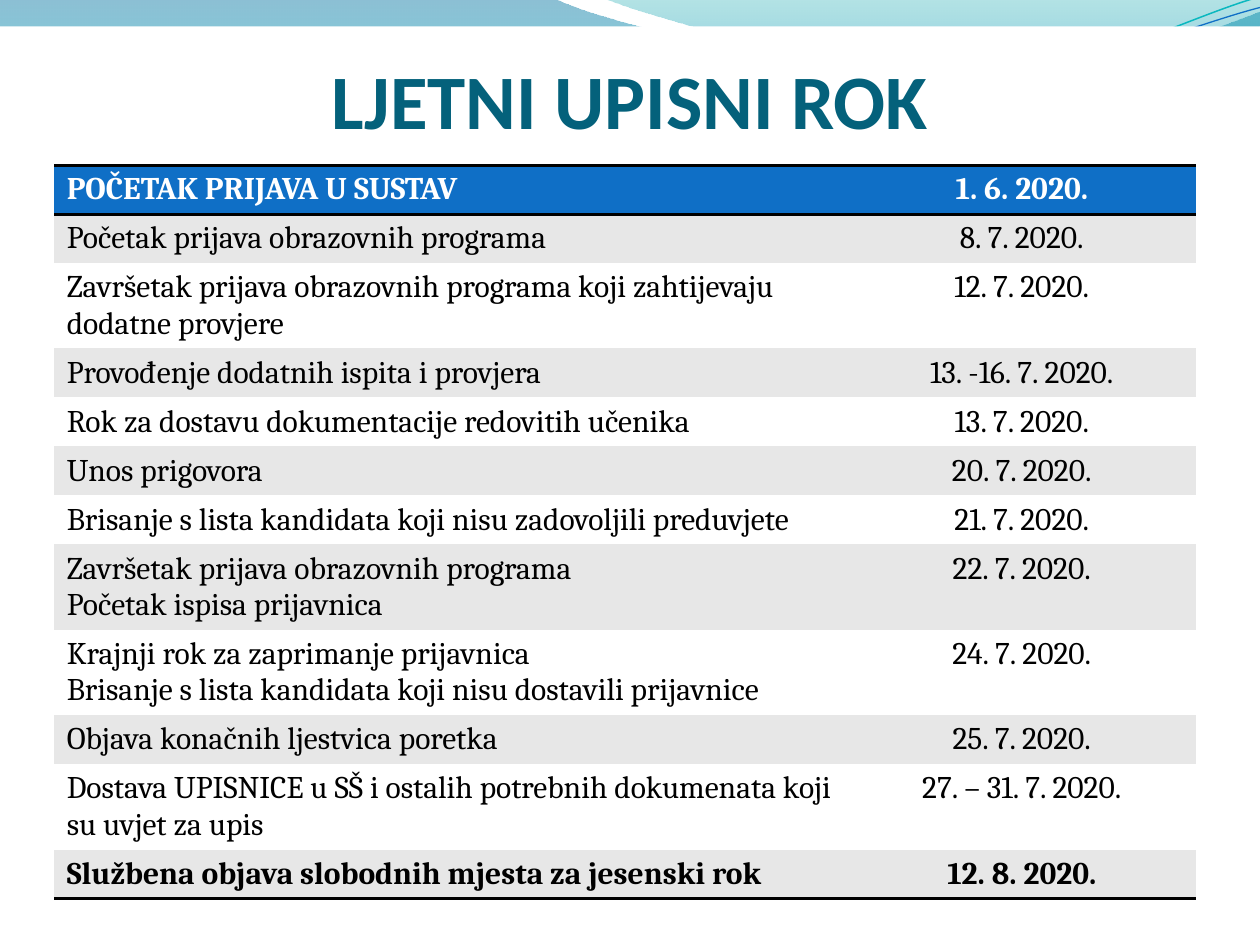
import math

from lxml import etree
from pptx import Presentation
from pptx.dml.color import RGBColor
from pptx.enum import text
from pptx.oxml import ns
from pptx.util import Inches, Pt

TITLE = "LJETNI UPISNI ROK"
SCHEDULE = [
    ("POČETAK PRIJAVA U SUSTAV", "1. 6. 2020."),
    ("Početak prijava obrazovnih programa", "8. 7. 2020."),
    ("Završetak prijava obrazovnih programa koji zahtijevaju dodatne provjere", "12. 7. 2020."),
    ("Provođenje dodatnih ispita i provjera", "13. -16. 7. 2020."),
    ("Rok za dostavu dokumentacije redovitih učenika", "13. 7. 2020."),
    ("Unos prigovora", "20. 7. 2020."),
    ("Brisanje s lista kandidata koji nisu zadovoljili preduvjete", "21. 7. 2020."),
    ("Završetak prijava obrazovnih programa\nPočetak ispisa prijavnica", "22. 7. 2020."),
    ("Krajnji rok za zaprimanje prijavnica\n"
     "Brisanje s lista kandidata koji nisu dostavili prijavnice", "24. 7. 2020."),
    ("Objava konačnih ljestvica poretka", "25. 7. 2020."),
    ("Dostava UPISNICE u SŠ i ostalih potrebnih dokumenata koji su uvjet za upis",
     "27. – 31. 7. 2020."),
    ("Službena objava slobodnih mjesta za jesenski rok", "12. 8. 2020."),
]

THEME = dict(
    title_font="Calibri", title_size=44, title="04617B",
    body_font="Cambria", body_size=18, body="000000",
    header="0F6FC6", header_text="FFFFFF", bands=("FFFFFF", "E7E7E7"),
    rule="000000", rule_width=2, paper="FFFFFF",
)

# Outlines in inches: a pair is a straight step, six numbers are a Bézier step.
# Gradient stops are (colour, opacity in percent), from top to bottom.
WAVES = [
    ([("0074A1", 45), ("00C6CF", 55)],
     [(0, 0), (4.4, -0.01), (4.76, 0.17, 6.64, 0.63, 7.58, 0.63),
      (8.53, 0.63, 9.58, 0.26, 10, 0.09), (10.01, 0.36),
      (9.83, 0.44, 8.7, 0.76, 7.46, 0.75), (6.22, 0.75, 3.82, 0.28, 2.57, 0.34),
      (1.29, 0.36, 0.46, 0.83, -0.01, 1.13), (0, 0)]),
    ([("00A1A9", 30), ("008BBF", 45)],
     [(4.79, -0.01), (5.09, 0.11, 6.82, 0.62, 7.69, 0.65),
      (8.56, 0.69, 9.61, 0.32, 10, 0.21), (10, 0), (4.79, -0.01)]),
]
CURVES = [
    ("0AB8BF", 0.85,
     [(0, 1.11), (0.48, 0.93, 1.58, 0.57, 2.77, 0.52),
      (3.95, 0.47, 5.93, 0.89, 7.13, 0.8), (8.33, 0.71, 9.38, 0.15, 9.98, -0.02)]),
    ("0F6FC6", 0.75,
     [(0, 1.04), (0.47, 0.96, 1.64, 0.61, 2.83, 0.56),
      (4.03, 0.51, 5.97, 0.84, 7.17, 0.75), (8.36, 0.67, 9.41, 0.21, 10, 0.06)]),
]
CURVE_TILT = -2.7
COLUMNS = (6.3, 2.76)
TABLE_LEFT, TABLE_TOP = 0.43, 1.31
ROW_HEIGHTS = {1: 0.37, 2: 0.64}
LINE_CHARS = 60  # characters that fit on one line of the first column


def color(name):
    return RGBColor.from_string(THEME.get(name, name))


def style_font(font, face, size, ink, bold):
    font.name, font.size, font.bold = face, Pt(size), bold
    font.color.rgb = color(ink)


def turn(x, y, degrees):
    cos, sin = math.cos(math.radians(degrees)), math.sin(math.radians(degrees))
    return x * cos - y * sin, x * sin + y * cos


def draw_outline(slide, steps, close, tilt=0):
    """Draw the steps; a tilted outline is stored level and then rotated."""
    knots = [turn(*step[i:i + 2], -tilt) for step in steps for i in range(0, len(step), 2)]
    points = [(Inches(x), Inches(y)) for x, y in knots]
    builder = slide.shapes.build_freeform(*points[0], scale=1.0)
    builder.add_line_segments(points[1:], close=close)
    outline = builder.convert_to_shape()
    outline.shadow.inherit = False
    # Join the three knots of each Bézier step into one curve
    segments = iter(list(outline.element.iter(ns.qn("a:lnTo"))))
    for step in steps[1:]:
        first = next(segments)
        if len(step) == 6:
            first.tag = ns.qn("a:cubicBezTo")
            for _ in range(2):
                extra = next(segments)
                first.append(extra[0])
                extra.getparent().remove(extra)
    # Rotation is about the shape's middle, so move that to its tilted place
    middle = outline.left + outline.width / 2, outline.top + outline.height / 2
    x, y = turn(*middle, tilt)
    outline.left = round(x - outline.width / 2)
    outline.top = round(y - outline.height / 2)
    outline.rotation = tilt
    return outline


def add_header_waves(slide):
    for stops, steps in WAVES:
        wave = draw_outline(slide, steps, True)
        wave.line.fill.background()
        wave.fill.gradient()
        wave.fill.gradient_angle = 270
        for position, (stop, (ink, _)) in enumerate(zip(wave.fill.gradient_stops, stops)):
            stop.position = position
            stop.color.rgb = color(ink)
        inks = wave.element.spPr.iter(ns.qn("a:srgbClr"))
        for ink_element, (_, opacity) in zip(inks, stops):
            etree.SubElement(ink_element, ns.qn("a:alpha"), val=str(opacity * 1000))
    for ink, width, steps in CURVES:
        curve = draw_outline(slide, steps, False, CURVE_TILT)
        curve.fill.background()
        curve.line.color.rgb = color(ink)
        curve.line.width = Pt(width)


def add_title(slide):
    title = slide.shapes.title
    slide.shapes._spTree.append(title.element)  # in front of the waves
    title.left, title.top, title.width, title.height = map(Inches, (0, 0.21, 10, 0.94))
    title.fill.solid()
    title.fill.fore_color.rgb = color("paper")
    frame = title.text_frame
    frame.text = TITLE
    frame.auto_size = text.MSO_AUTO_SIZE.NONE
    frame.vertical_anchor = text.MSO_ANCHOR.BOTTOM
    frame.margin_left = frame.margin_right = frame.margin_bottom = 0
    frame.margin_top = Inches(0.05)
    heading = frame.paragraphs[0]
    heading.alignment = text.PP_ALIGN.CENTER
    style_font(heading.font, THEME["title_font"], THEME["title_size"], "title", True)


def add_rules(cell, sides):
    properties = cell._tc.get_or_add_tcPr()
    for position, side in enumerate(sides):
        rule = etree.Element(ns.qn("a:ln" + side), w=str(Pt(THEME["rule_width"])))
        fill = etree.SubElement(rule, ns.qn("a:solidFill"))
        etree.SubElement(fill, ns.qn("a:srgbClr"), val=THEME["rule"])
        properties.insert(position, rule)  # borders come before the fill


def add_schedule(slide):
    heights = [ROW_HEIGHTS[sum(1 + (len(line) > LINE_CHARS) for line in step.split("\n"))]
               for step, _ in SCHEDULE]
    table = slide.shapes.add_table(
        len(SCHEDULE), len(COLUMNS), Inches(TABLE_LEFT), Inches(TABLE_TOP),
        Inches(sum(COLUMNS)), Inches(sum(heights))).table
    # Plain table style: no grid, no banding
    table._tbl.tblPr.find(ns.qn("a:tableStyleId")).text = "{2D5ABB26-0587-4C30-8999-92F81FD0307C}"
    for column, width in zip(table.columns, COLUMNS):
        column.width = Inches(width)
    last = len(SCHEDULE) - 1
    for r, entry in enumerate(SCHEDULE):
        table.rows[r].height = Inches(heights[r])
        for c, words in enumerate(entry):
            cell = table.cell(r, c)
            cell.text = words
            cell.fill.solid()
            cell.fill.fore_color.rgb = color("header" if r == 0 else THEME["bands"][r % 2])
            add_rules(cell, {0: "TB", last: "B"}.get(r, ""))
            for paragraph in cell.text_frame.paragraphs:
                paragraph.alignment = text.PP_ALIGN.CENTER if c else text.PP_ALIGN.LEFT
                style_font(paragraph.font, THEME["body_font"], THEME["body_size"],
                           "body" if r else "header_text", r in (0, last))


def main():
    deck = Presentation()
    deck.slide_width, deck.slide_height = Inches(10), Inches(7.5)
    slide = deck.slides.add_slide(deck.slide_layouts[5])
    add_header_waves(slide)
    add_title(slide)
    add_schedule(slide)
    deck.save("out.pptx")


if __name__ == "__main__":
    main()
